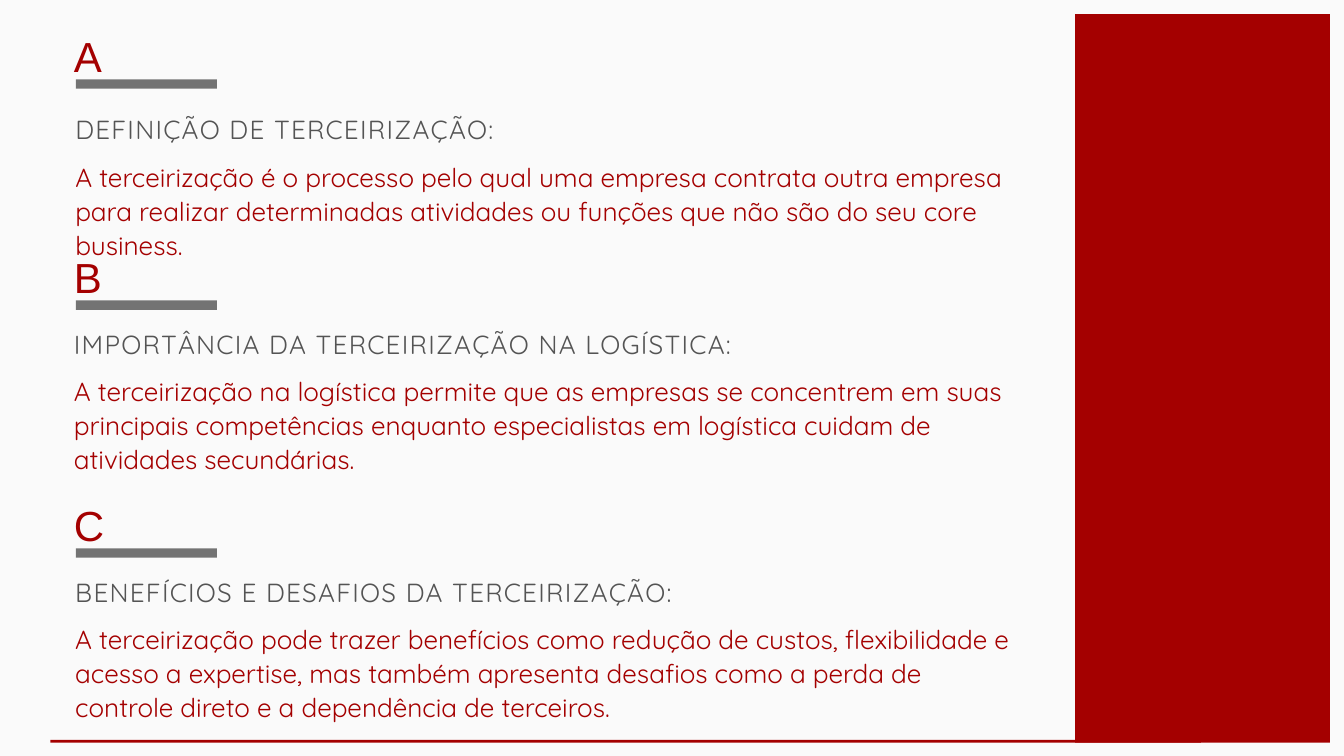
import pptx
import pptx.dml.color
import pptx.enum.shapes
import pptx.enum.text
import pptx.util

RED = pptx.dml.color.RGBColor(0xA4, 0x00, 0x00)
DARK_GRAY = pptx.dml.color.RGBColor(0x54, 0x54, 0x54)
BAR_GRAY = pptx.dml.color.RGBColor(0x73, 0x73, 0x73)
PAPER = pptx.dml.color.RGBColor(0xFA, 0xFA, 0xFA)

COLUMNS, ROWS = 20, 11.25
CELL = pptx.util.Inches(1)

SECTIONS = [
    ((1.12, 0.49, 14.08, 2.85), 1.24, "A", "DEFINIÇÃO DE TERCEIRIZAÇÃO:",
     "A terceirização é o processo pelo qual uma empresa contrata outra empresa para realizar "
     "determinadas atividades ou funções que não são do seu core business."),
    ((1.1, 3.78, 14.1, 3.25), 1.14, "B", "IMPORTÂNCIA DA TERCEIRIZAÇÃO NA LOGÍSTICA:",
     "A terceirização na logística permite que as empresas se concentrem em suas principais "
     "competências enquanto especialistas em logística cuidam de atividades secundárias."),
    ((1.12, 7.47, 14.1, 3.25), 1.14, "C", "BENEFÍCIOS E DESAFIOS DA TERCEIRIZAÇÃO:",
     "A terceirização pode trazer benefícios como redução de custos, flexibilidade e acesso a "
     "expertise, mas também apresenta desafios como a perda de controle direto e a dependência "
     "de terceiros."),
]


def place(box):
    return [round(cells * CELL) for cells in box]


def add_text(page, box, text, *, size, leading, color, font="Quicksand", spacing=0):
    frame = page.shapes.add_textbox(*place(box)).text_frame
    frame.margin_left = frame.margin_right = frame.margin_top = frame.margin_bottom = 0
    frame.word_wrap = True
    frame.auto_size = pptx.enum.text.MSO_AUTO_SIZE.SHAPE_TO_FIT_TEXT
    para = frame.paragraphs[0]
    para.line_spacing = pptx.util.Pt(leading)
    span = para.add_run()
    span.text = text
    span.font.size = pptx.util.Pt(size)
    span.font.name = font
    span.font.color.rgb = color
    if spacing:
        span.font._element.set("spc", str(round(spacing * 100)))


def add_block(page, box, color):
    block = page.shapes.add_shape(pptx.enum.shapes.MSO_SHAPE.RECTANGLE, *place(box))
    block.shadow.inherit = False
    block.fill.solid()
    block.fill.fore_color.rgb = color
    block.line.fill.background()


def add_section(page, box, heading_drop, letter, heading, body):
    left, top, width, height = box
    heading_top = top + heading_drop
    body_top = heading_top + 0.63
    add_text(page, (left, body_top, width, top + height - body_top), body,
             size=28, leading=36.4, color=RED)
    add_text(page, (left, heading_top, width, 0.44), heading,
             size=28, leading=30.8, color=DARK_GRAY, spacing=1.4)
    add_text(page, (1.1, top, 8.18, 0.77), letter,
             size=45, leading=51.3, color=RED, font="Arial", spacing=-0.5)
    add_block(page, (1.13, top + 0.69, 2.1, 0.14), BAR_GRAY)


def add_frame(page, box):
    left, top, width, height = box
    panel_width = 3.79
    add_block(page, (left + width - panel_width, top, panel_width, height), RED)
    add_block(page, (left, top + height - 0.04, 17.12, 0.04), RED)


def main():
    deck = pptx.Presentation()
    deck.slide_width, deck.slide_height = place((COLUMNS, ROWS))
    page = deck.slides.add_slide(deck.slide_layouts[6])
    page.background.fill.solid()
    page.background.fill.fore_color.rgb = PAPER
    add_frame(page, (0.75, 0.21, 19.04, 10.84))
    for section in SECTIONS:
        add_section(page, *section)
    deck.save("out.pptx")


if __name__ == "__main__":
    main()
